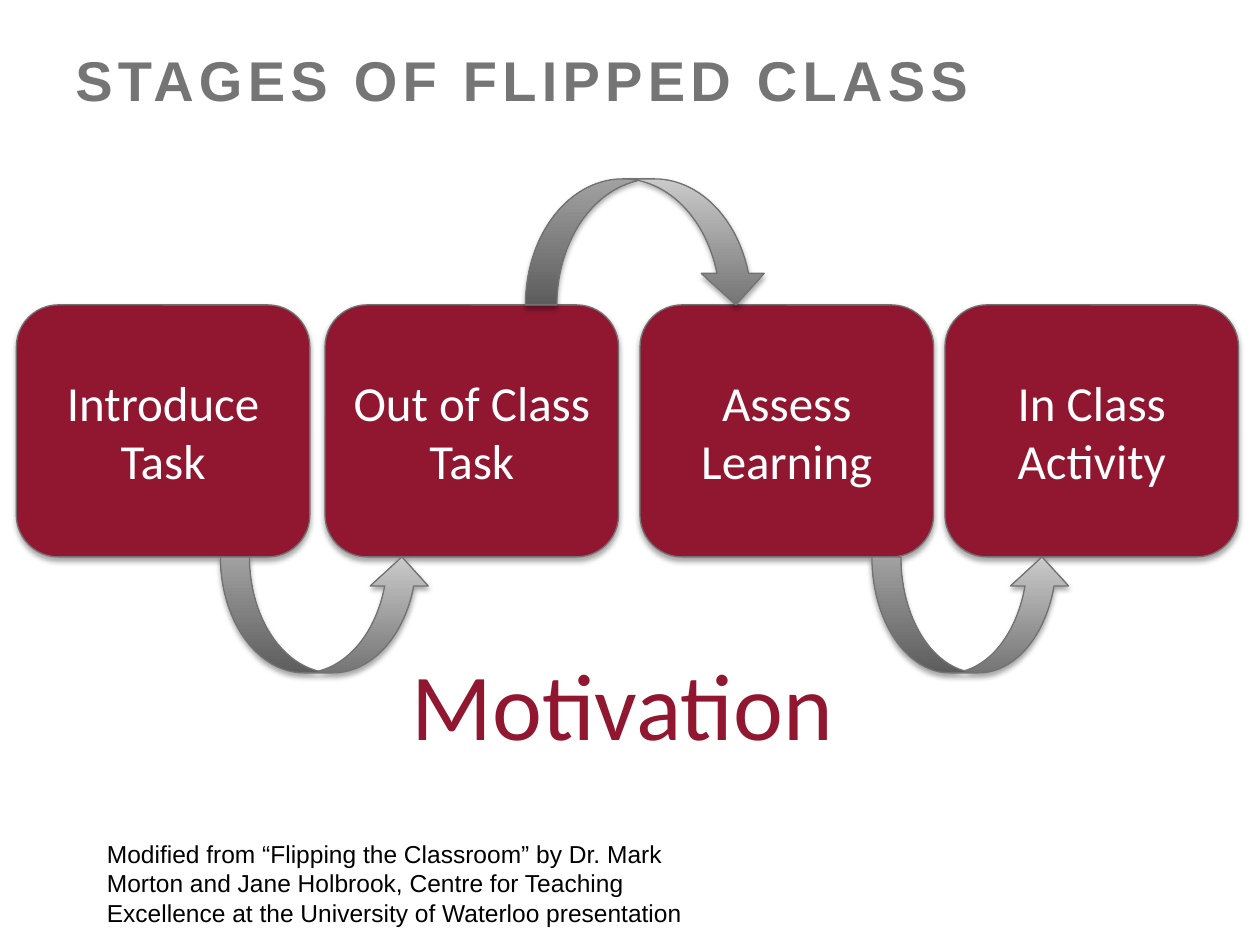
from dataclasses import dataclass

import lxml.etree
import pptx
import pptx.dml.color
import pptx.enum.shapes
import pptx.enum.text
import pptx.oxml.ns
import pptx.util

Inches = pptx.util.Inches
Pt = pptx.util.Pt
RGB = pptx.dml.color.RGBColor
Shapes = pptx.enum.shapes.MSO_SHAPE
Align = pptx.enum.text.PP_ALIGN
Anchor = pptx.enum.text.MSO_ANCHOR
AutoSize = pptx.enum.text.MSO_AUTO_SIZE
qn = pptx.oxml.ns.qn


@dataclass(frozen=True)
class Theme:
    crimson: RGB = RGB.from_string("911731")
    grey: RGB = RGB.from_string("757575")
    silver: RGB = RGB.from_string("CACACA")
    outline: RGB = RGB.from_string("727272")
    white: RGB = RGB.from_string("FFFFFF")
    black: RGB = RGB.from_string("000000")
    heading_font: str = "Arial"
    body_font: str = "Calibri"
    title_size: int = 32
    stage_size: int = 28
    motivation_size: int = 54
    credit_size: int = 14


@dataclass(frozen=True)
class Stage:
    label: str
    left: float


@dataclass(frozen=True)
class Arrow:
    preset: Shapes
    left: float
    top: float
    width: float
    height: float


@dataclass(frozen=True)
class Caption:
    text: str
    left: float
    top: float
    width: float
    height: float
    font: dict
    wrap: bool = True
    auto_size: AutoSize = AutoSize.SHAPE_TO_FIT_TEXT
    spacing: int = 0  # hundredths of a point


THEME = Theme()
STAGE_TOP, STAGE_WIDTH, STAGE_HEIGHT = 2.42, 2.33, 2
STAGE_BOTTOM = STAGE_TOP + STAGE_HEIGHT

STAGES = [
    Stage("Introduce Task", 0.13),
    Stage("Out of Class Task", 2.58),
    Stage("Assess Learning", 5.08),
    Stage("In Class Activity", 7.5),
]
ARROWS = [
    Arrow(Shapes.CURVED_UP_ARROW, 1.75, STAGE_BOTTOM, 1.67, 0.92),
    Arrow(Shapes.CURVED_DOWN_ARROW, 4.17, STAGE_TOP - 1, 1.92, 1),
    Arrow(Shapes.CURVED_UP_ARROW, 6.92, STAGE_BOTTOM, 1.58, 0.92),
]


def font_format(name: str, size: int, color: RGB, bold: bool = False) -> dict:
    return {"name": name, "size": Pt(size), "bold": bold, "color": color}


TITLE = Caption(
    "STAGES OF FLIPPED CLASS", 0.5, 0.31, 9, 1.25,
    font_format(THEME.heading_font, THEME.title_size, THEME.grey, True),
    auto_size=AutoSize.NONE, spacing=300,
)
CREDIT = Caption(
    "Modified from “Flipping the Classroom” by Dr. Mark Morton and Jane Holbrook, "
    "Centre for Teaching Excellence at the University of Waterloo presentation",
    0.75, 6.61, 5, 0.81,
    font_format(THEME.heading_font, THEME.credit_size, THEME.black),
)
MOTIVATION = Caption(
    "Motivation", 3.17, 5.08, 3.59, 1.01,
    font_format(THEME.body_font, THEME.motivation_size, THEME.crimson),
    wrap=False,
)


def write_text(frame, text: str, formats: dict):
    """Put one formatted span in the first paragraph and return it."""
    span = frame.paragraphs[0].add_run()
    span.text = text
    for name, value in formats.items():
        if name == "color":
            span.font.color.rgb = value
        else:
            setattr(span.font, name, value)
    return span


def add_outline_and_shadow(shape) -> None:
    shape.line.color.rgb = THEME.outline
    shape.line.width = Pt(0.75)
    shape.shadow.inherit = False
    effects = shape._element.spPr.find(qn("a:effectLst"))
    shadow = lxml.etree.SubElement(
        effects, qn("a:outerShdw"), blurRad=str(Pt(3.1)), dist=str(Pt(1.8)),
        dir="5400000", rotWithShape="0",
    )
    color = lxml.etree.SubElement(shadow, qn("a:srgbClr"), val=str(THEME.black))
    lxml.etree.SubElement(color, qn("a:alpha"), val="35000")


def add_stage(page, stage: Stage) -> None:
    box = page.shapes.add_shape(
        Shapes.ROUNDED_RECTANGLE, Inches(stage.left), Inches(STAGE_TOP),
        Inches(STAGE_WIDTH), Inches(STAGE_HEIGHT),
    )
    box.fill.solid()
    box.fill.fore_color.rgb = THEME.crimson
    add_outline_and_shadow(box)
    frame = box.text_frame
    frame.word_wrap = True
    frame.vertical_anchor = Anchor.MIDDLE
    frame.paragraphs[0].alignment = Align.CENTER
    write_text(frame, stage.label,
               font_format(THEME.body_font, THEME.stage_size, THEME.white))


def add_arrow(page, arrow: Arrow) -> None:
    shape = page.shapes.add_shape(
        arrow.preset, Inches(arrow.left), Inches(arrow.top),
        Inches(arrow.width), Inches(arrow.height),
    )
    shape.fill.gradient()
    shape.fill.gradient_angle = 90  # dark at the bottom, light at the top
    stops = shape.fill.gradient_stops
    for stop, position, color in zip(stops, (0, 1), (THEME.grey, THEME.silver)):
        stop.position = position
        stop.color.rgb = color
    add_outline_and_shadow(shape)


def add_caption(page, caption: Caption) -> None:
    box = page.shapes.add_textbox(
        Inches(caption.left), Inches(caption.top),
        Inches(caption.width), Inches(caption.height),
    )
    frame = box.text_frame
    frame.word_wrap = caption.wrap
    frame.auto_size = caption.auto_size
    span = write_text(frame, caption.text, caption.font)
    if caption.spacing:
        span.font._element.set("spc", str(caption.spacing))


def main() -> None:
    deck = pptx.Presentation()
    deck.slide_width, deck.slide_height = Inches(10), Inches(7.5)
    page = deck.slides.add_slide(deck.slide_layouts[6])

    # Heading
    add_caption(page, TITLE)

    # Stages and the arrows between them
    for stage in STAGES:
        add_stage(page, stage)
    for arrow in ARROWS:
        add_arrow(page, arrow)

    # Credit and motivation
    add_caption(page, CREDIT)
    add_caption(page, MOTIVATION)

    deck.save("out.pptx")


if __name__ == "__main__":
    main()
